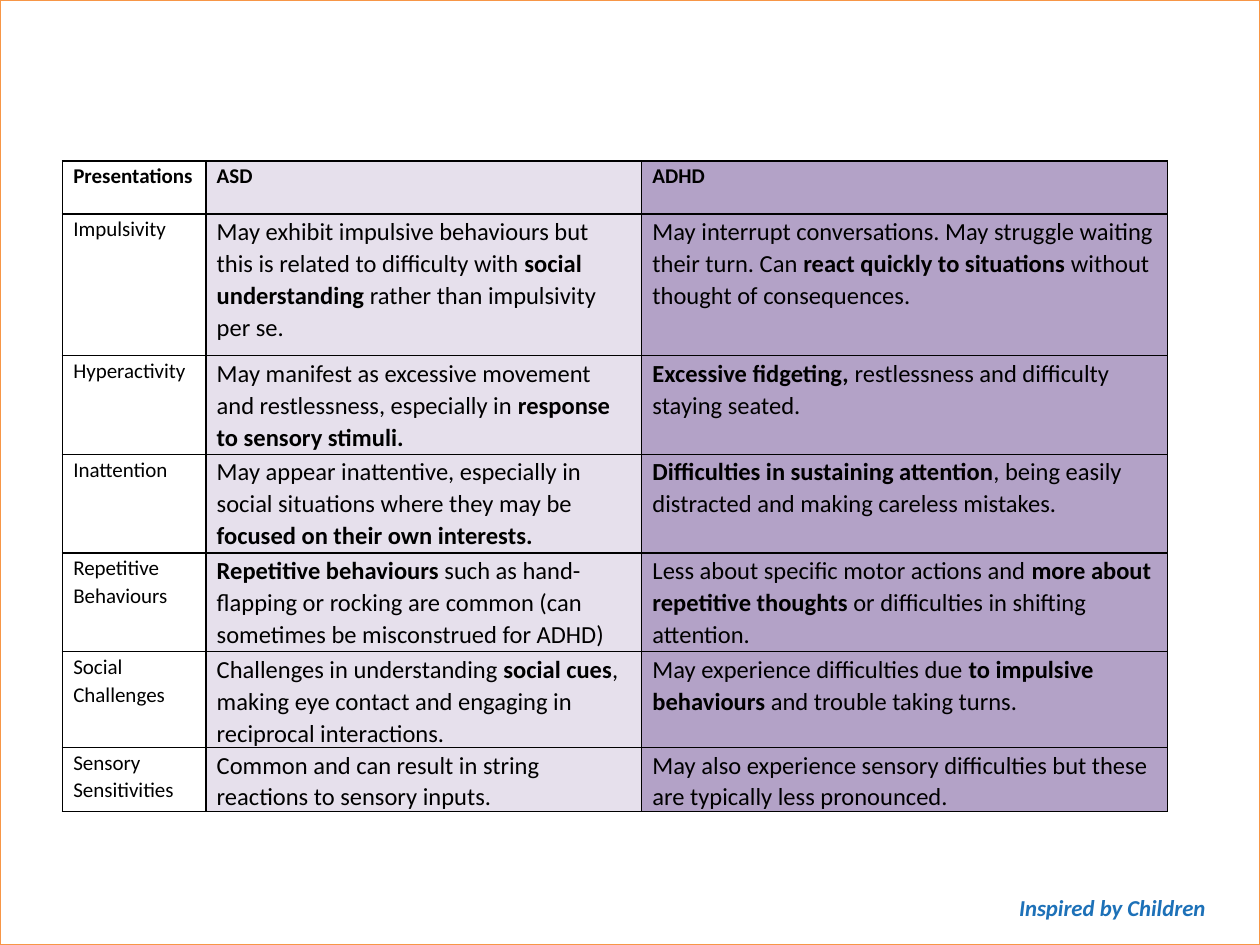
import pptx
import pptx.util
import pptx.dml.color
import pptx.enum.shapes
import pptx.enum.text
import pptx.oxml

Pt = pptx.util.Pt
RGB = pptx.dml.color.RGBColor
BLACK = RGB(0, 0, 0)
WHITE = RGB(255, 255, 255)
ORANGE = RGB(0xF7, 0x96, 0x46)
BLUE = RGB(0x1D, 0x71, 0xB8)
LILAC = RGB(0xE6, 0xE0, 0xEC)
PURPLE = RGB(0xB3, 0xA2, 0xC7)
FONT = "Calibri"
NS = "http://schemas.openxmlformats.org/drawingml/2006/main"

FILLS = [None, LILAC, PURPLE]
WIDTHS = [82, 249, 300.6]
HEIGHTS = [30.3, 81, 56.4, 56.4, 56.4, 54.7, 36.7]
# Asterisks enclose bold words.
ROWS = [
    ("*Presentations*", "*ASD*", "*ADHD*"),
    ("Impulsivity",
     "May exhibit impulsive behaviours but this is related to difficulty with "
     "*social understanding *rather than impulsivity per se.",
     "May interrupt conversations. May struggle waiting their turn. Can "
     "*react quickly to situations* without thought of consequences."),
    ("Hyperactivity",
     "May manifest as excessive movement and restlessness, especially in "
     "*response to sensory stimuli.*",
     "*Excessive fidgeting, *restlessness and difficulty staying seated."),
    ("Inattention",
     "May appear inattentive, especially in social situations where they may be "
     "*focused on their own interests.*",
     "*Difficulties in sustaining attention*, being easily distracted and "
     "making careless mistakes."),
    ("Repetitive Behaviours",
     "*Repetitive behaviours *such as hand-flapping or rocking are common "
     "(can sometimes be misconstrued for ADHD)",
     "Less about specific motor actions and *more about repetitive thoughts* "
     "or difficulties in shifting attention."),
    ("Social Challenges",
     "Challenges in understanding *social cues*, making eye contact and "
     "engaging in reciprocal interactions.",
     "May experience difficulties due *to impulsive behaviours *and trouble "
     "taking turns."),
    ("Sensory Sensitivities",
     "Common and can result in string reactions to sensory inputs.",
     "May also experience sensory difficulties but these are typically less "
     "pronounced."),
]


def style(font, size, color):
    font.name = FONT
    font.size = Pt(size)
    font.color.rgb = color


def add_frame(slide, width, height):
    frame = slide.shapes.add_shape(
        pptx.enum.shapes.MSO_SHAPE.RECTANGLE, 0, 0, width, height)
    frame.shadow.inherit = False
    frame.fill.solid()
    frame.fill.fore_color.rgb = WHITE
    frame.line.color.rgb = ORANGE
    frame.line.width = Pt(0.75)


def add_motto(slide):
    box = slide.shapes.add_textbox(Pt(563.8), Pt(507), Pt(132), Pt(23))
    box.text_frame.word_wrap = True
    para = box.text_frame.paragraphs[0]
    para.text = "Inspired by Children"
    para.alignment = pptx.enum.text.PP_ALIGN.RIGHT
    style(para.font, 13, BLUE)
    para.font.bold = para.font.italic = True


def add_border(cell):
    props = cell._tc.get_or_add_tcPr()
    for pos, side in enumerate("LRTB"):
        props.insert(pos, pptx.oxml.parse_xml(
            f'<a:ln{side} xmlns:a="{NS}" w="{Pt(1)}"><a:solidFill>'
            f'<a:srgbClr val="{BLACK}"/></a:solidFill></a:ln{side}>'))


def fill_cell(cell, text, size, fill):
    cell.margin_left = cell.margin_right = Pt(6.2)
    cell.margin_top, cell.margin_bottom = Pt(0.7), 0
    if fill is None:
        cell.fill.background()
    else:
        cell.fill.solid()
        cell.fill.fore_color.rgb = fill
    add_border(cell)
    para = cell.text_frame.paragraphs[0]
    para.line_spacing = 1.07
    para.space_after = Pt(8)
    style(para.font, size, BLACK)
    for num, part in enumerate(text.split("*")):
        if part:
            run = para.add_run()
            run.text = part
            run.font.bold = num % 2 == 1


def add_grid(slide):
    table = slide.shapes.add_table(
        len(ROWS), len(WIDTHS), Pt(35.7), Pt(92),
        Pt(sum(WIDTHS)), Pt(sum(HEIGHTS))).table
    table.first_row = table.horz_banding = False
    for col, width in zip(table.columns, WIDTHS):
        col.width = Pt(width)
    for r, texts in enumerate(ROWS):
        table.rows[r].height = Pt(HEIGHTS[r])
        for c, text in enumerate(texts):
            size = 14 if r and c else 12
            fill_cell(table.cell(r, c), text, size, FILLS[c])


def main():
    deck = pptx.Presentation()
    deck.slide_width, deck.slide_height = Pt(720), Pt(540)
    slide = deck.slides.add_slide(deck.slide_layouts[6])
    add_frame(slide, deck.slide_width, deck.slide_height)
    add_motto(slide)
    add_grid(slide)
    deck.save("out.pptx")


if __name__ == "__main__":
    main()
